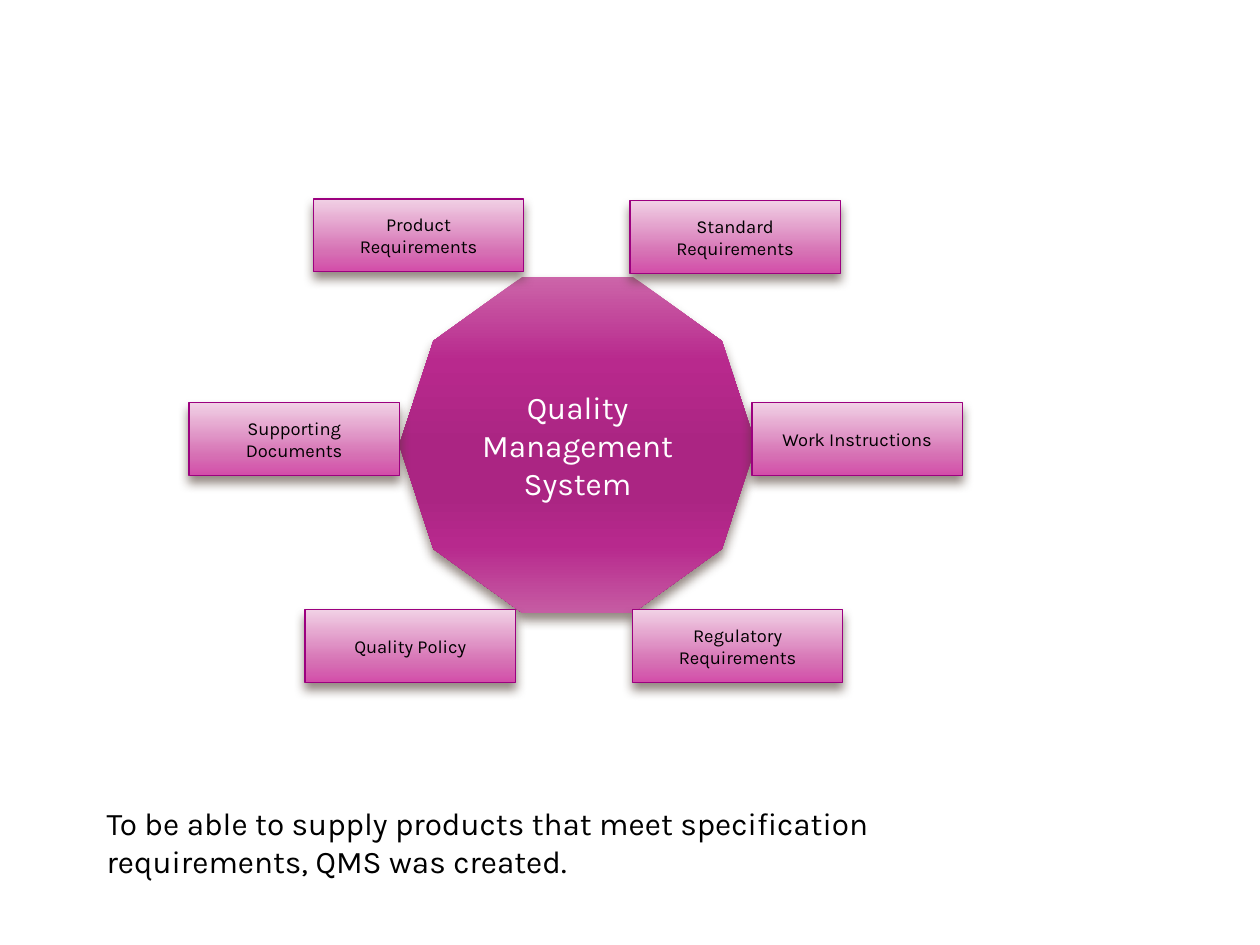
from lxml.etree import SubElement
from pptx import Presentation
from pptx.dml.color import RGBColor as RGB
from pptx.enum.shapes import MSO_SHAPE as Shape
from pptx.enum.text import MSO_ANCHOR as Anchor, MSO_AUTO_SIZE as Fit, PP_ALIGN as Align
from pptx.oxml.ns import qn
from pptx.util import Cm, Pt

FONT = "Karla"
BLACK = RGB(0x00, 0x00, 0x00)
WHITE = RGB(0xFF, 0xFF, 0xFF)
PLUM = RGB(0x9C, 0x00, 0x7F)
BROWN = RGB(0x4E, 0x3B, 0x30)
HUB_FADE = [
    (0, RGB(0xCC, 0x65, 0xA9)), (25, RGB(0xB8, 0x29, 0x8D)),
    (50, RGB(0xAB, 0x25, 0x83)), (65, RGB(0xAB, 0x25, 0x83)),
    (80, RGB(0xB7, 0x29, 0x8D)), (100, RGB(0xC6, 0x5C, 0xA3)),
]
BOX_FADE = [
    (0, RGB(0xF1, 0xD1, 0xE5)), (72, RGB(0xD6, 0x71, 0xB4)),
    (100, RGB(0xD3, 0x4D, 0xA9)),
]

BOX_W, BOX_H = 4.24, 1.47
# Label, left and top in cm within the diagram
BOXES = [
    ("Work Instructions", 11.35, 4.11),
    ("Supporting Documents", 0, 4.11),
    ("Regulatory Requirements", 8.94, 8.28),
    ("Product\nRequirements", 2.51, 0),
    ("Standard Requirements", 8.89, 0.03),
    ("Quality Policy", 2.34, 8.28),
]


def write(shape, text, size=18, color=BLACK, align=Align.LEFT, anchor=Anchor.TOP):
    frame = shape.text_frame
    frame.word_wrap = True
    frame.vertical_anchor = anchor
    frame.text = text
    for para in frame.paragraphs:
        para.alignment = align
        font = para.font
        font.name, font.size, font.color.rgb = FONT, Pt(size), color


def fade(shape, stops):
    """Fill from top to bottom with any number of colour stops."""
    shape.fill.gradient()
    shape.fill.gradient_angle = 270
    parent = shape._element.spPr.find(".//" + qn("a:gsLst"))
    parent.clear()
    for pos, color in stops:
        stop = SubElement(parent, qn("a:gs"), pos=str(pos * 1000))
        SubElement(stop, qn("a:srgbClr"), val=str(color))


def shade(shape):
    """Cast a soft shadow straight down."""
    shape.shadow.inherit = False
    effects = shape._element.spPr.find(qn("a:effectLst"))
    outer = SubElement(effects, qn("a:outerShdw"), blurRad=str(Pt(6)),
                       dist=str(Pt(4)), dir="5400000", rotWithShape="0")
    color = SubElement(outer, qn("a:srgbClr"), val=str(BROWN))
    SubElement(color, qn("a:alpha"), val="60000")


def block(group, kind, box, text, stops, **style):
    shape = group.shapes.add_shape(kind, *box)
    fade(shape, stops)
    shade(shape)
    write(shape, text, align=Align.CENTER, anchor=Anchor.MIDDLE, **style)
    return shape


def diagram(slide, left, top):
    group = slide.shapes.add_group_shape()

    # Central hub
    hub = block(group, Shape.DECAGON,
                (left + Cm(4.24), top + Cm(1.57), Cm(7.19), Cm(6.78)),
                "Quality Management System", HUB_FADE, color=WHITE)
    hub.line.fill.background()

    # Boxes around the hub
    for text, x, y in BOXES:
        item = block(group, Shape.RECTANGLE,
                     (left + Cm(x), top + Cm(y), Cm(BOX_W), Cm(BOX_H)),
                     text, BOX_FADE, size=10.5)
        item.line.color.rgb = PLUM
        item.line.width = Pt(0.79)


def caption(slide, left, top, width, height):
    note = slide.shapes.add_textbox(left, top, width, height)
    write(note, "To be able to supply products that meet specification "
                "requirements, QMS was created.")
    note.text_frame.auto_size = Fit.SHAPE_TO_FIT_TEXT


def main():
    deck = Presentation()
    deck.slide_width, deck.slide_height = Cm(25.4), Cm(19.05)
    slide = deck.slides.add_slide(deck.slide_layouts[6])
    caption(slide, Cm(1.9), Cm(16.08), Cm(19.25), Cm(1.8))
    diagram(slide, Cm(3.81), Cm(4.01))
    deck.save("out.pptx")


if __name__ == "__main__":
    main()
